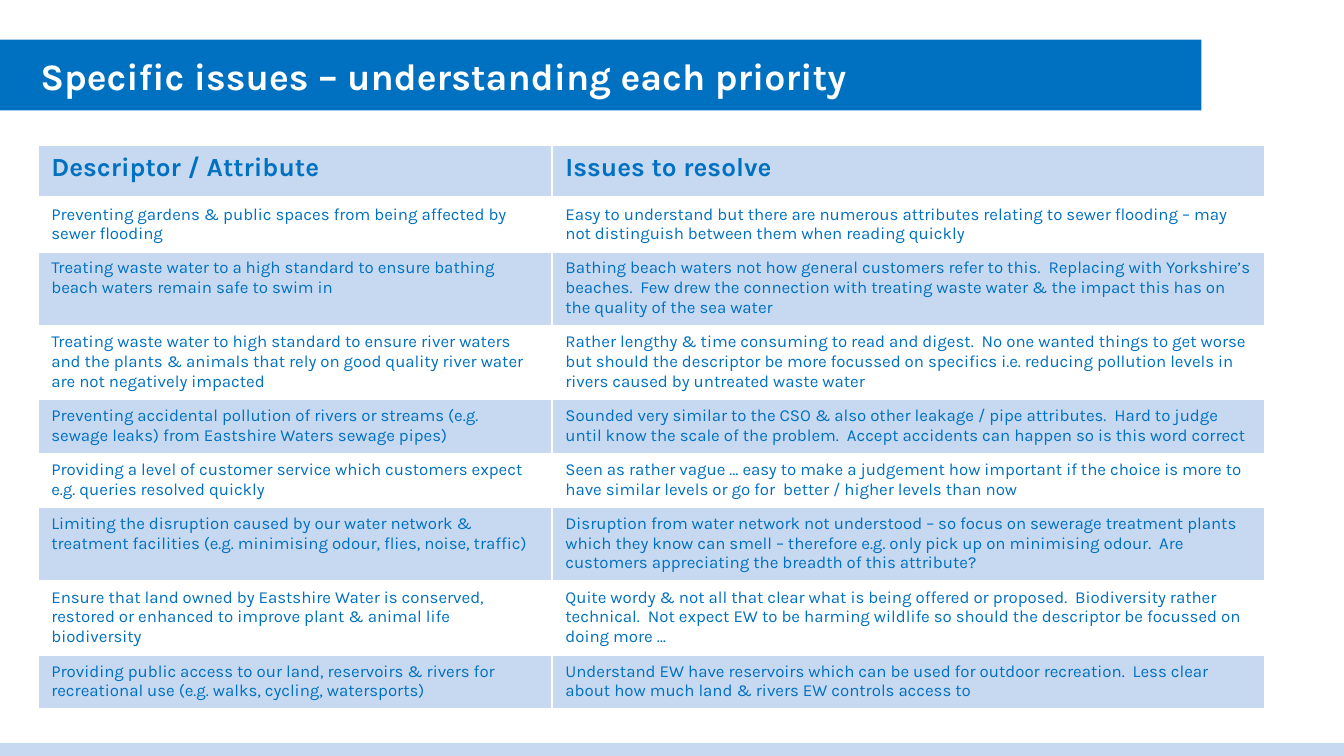
from lxml.etree import SubElement
from pptx import Presentation
from pptx.dml.color import RGBColor
from pptx.enum.shapes import MSO_SHAPE as Shape
from pptx.enum.text import MSO_ANCHOR as Anchor, PP_ALIGN as Align
from pptx.oxml.ns import qn
from pptx.util import Pt

BLUE = RGBColor(0x00, 0x70, 0xC0)
PALE = RGBColor(0xC6, 0xD9, 0xF1)
WHITE = RGBColor(0xFF, 0xFF, 0xFF)
FONT = "Karla"

TITLE = "Specific issues – understanding each priority"
HEADINGS = ("Descriptor / Attribute", "Issues to resolve")
HEADING_HEIGHT = 28.1
LINE_HEIGHT = 10.8
CELL_PADDING = 7.2
COLUMN_WIDTHS = (275.4, 382)

PRIORITIES = [
    (2, "Preventing gardens & public spaces from being affected by sewer flooding",
     "Easy to understand but there are numerous attributes relating to sewer flooding – may "
     "not distinguish between them when reading quickly"),
    (3, "Treating waste water to a high standard to ensure bathing beach waters remain safe to swim in",
     "Bathing beach waters not how general customers refer to this.  Replacing with Yorkshire’s "
     "beaches.  Few drew the connection with treating waste water & the impact this has on "
     "the quality of the sea water"),
    (3, "Treating waste water to high standard to ensure river waters and the plants & animals "
     "that rely on good quality river water are not negatively impacted",
     "Rather lengthy & time consuming to read and digest.  No one wanted things to get worse "
     "but should the descriptor be more focussed on specifics i.e. reducing pollution levels in "
     "rivers caused by untreated waste water"),
    (2, "Preventing accidental pollution of rivers or streams (e.g. sewage leaks) from "
     "Eastshire Waters sewage pipes)",
     "Sounded very similar to the CSO & also other leakage / pipe attributes.  Hard to judge "
     "until know the scale of the problem.  Accept accidents can happen so is this word correct"),
    (2, "Providing a level of customer service which customers expect e.g. queries resolved quickly",
     "Seen as rather vague … easy to make a judgement how important if the choice is more to "
     "have similar levels or go for  better / higher levels than now"),
    (3, "Limiting the disruption caused by our water network & treatment facilities "
     "(e.g. minimising odour, flies, noise, traffic)",
     "Disruption from water network not understood – so focus on sewerage treatment plants "
     "which they know can smell – therefore e.g. only pick up on minimising odour.  Are "
     "customers appreciating the breadth of this attribute?"),
    (3, "Ensure that land owned by Eastshire Water is conserved, restored or enhanced to "
     "improve plant & animal life biodiversity",
     "Quite wordy & not all that clear what is being offered or proposed.  Biodiversity rather "
     "technical.  Not expect EW to be harming wildlife so should the descriptor be focussed on "
     "doing more …"),
    (2, "Providing public access to our land, reservoirs & rivers for recreational use "
     "(e.g. walks, cycling, watersports)",
     "Understand EW have reservoirs which can be used for outdoor recreation.  Less clear "
     "about how much land & rivers EW controls access to"),
]


def add_band(slide, left, top, width, height, color):
    band = slide.shapes.add_shape(Shape.RECTANGLE, Pt(left), Pt(top), Pt(width), Pt(height))
    band.shadow.inherit = False
    band.fill.solid()
    band.fill.fore_color.rgb = color
    band.line.fill.background()
    return band


def write(frame, text, size, color, bold=False):
    paragraph = frame.paragraphs[0]
    paragraph.alignment = Align.LEFT
    run = paragraph.add_run()
    run.text = text
    run.font.name = FONT
    run.font.size = Pt(size)
    run.font.bold = bold
    run.font.color.rgb = color


def add_title(slide):
    banner = add_band(slide, 0, 21.2, 643.6, 38, BLUE)
    frame = banner.text_frame
    frame.word_wrap = True
    frame.vertical_anchor = Anchor.MIDDLE
    frame.margin_left = Pt(21.6)
    write(frame, TITLE, 20, WHITE, bold=True)


def set_borders(cell, bottom_width):
    properties = cell._tc.get_or_add_tcPr()
    for side, width in (("L", 1), ("R", 1), ("T", 1), ("B", bottom_width)):
        border = SubElement(properties, qn(f"a:ln{side}"), w=str(Pt(width)))
        fill = SubElement(border, qn("a:solidFill"))
        SubElement(fill, qn("a:srgbClr"), val=str(WHITE))


def fill_row(row, height, texts, size, background, heading=False):
    row.height = Pt(height)
    for cell, text in zip(row.cells, texts):
        set_borders(cell, 3 if heading else 1)
        cell.fill.solid()
        cell.fill.fore_color.rgb = background
        write(cell.text_frame, text, size, BLUE, bold=heading)


def add_priorities(slide):
    table = slide.shapes.add_table(
        len(PRIORITIES) + 1, len(HEADINGS), Pt(20.3), Pt(78), Pt(sum(COLUMN_WIDTHS)), Pt(301.6)
    ).table
    for column, width in zip(table.columns, COLUMN_WIDTHS):
        column.width = Pt(width)
    fill_row(table.rows[0], HEADING_HEIGHT, HEADINGS, 14, PALE, heading=True)
    for number, (lines, *texts) in enumerate(PRIORITIES, 1):
        background = WHITE if number % 2 else PALE
        height = lines * LINE_HEIGHT + CELL_PADDING
        fill_row(table.rows[number], height, texts, 9, background)


def main():
    deck = Presentation()
    deck.slide_width, deck.slide_height = Pt(720), Pt(405)
    slide = deck.slides.add_slide(deck.slide_layouts[6])
    add_band(slide, 0, 398, 720, 9.4, PALE)
    add_title(slide)
    add_priorities(slide)
    deck.save("out.pptx")


if __name__ == "__main__":
    main()
